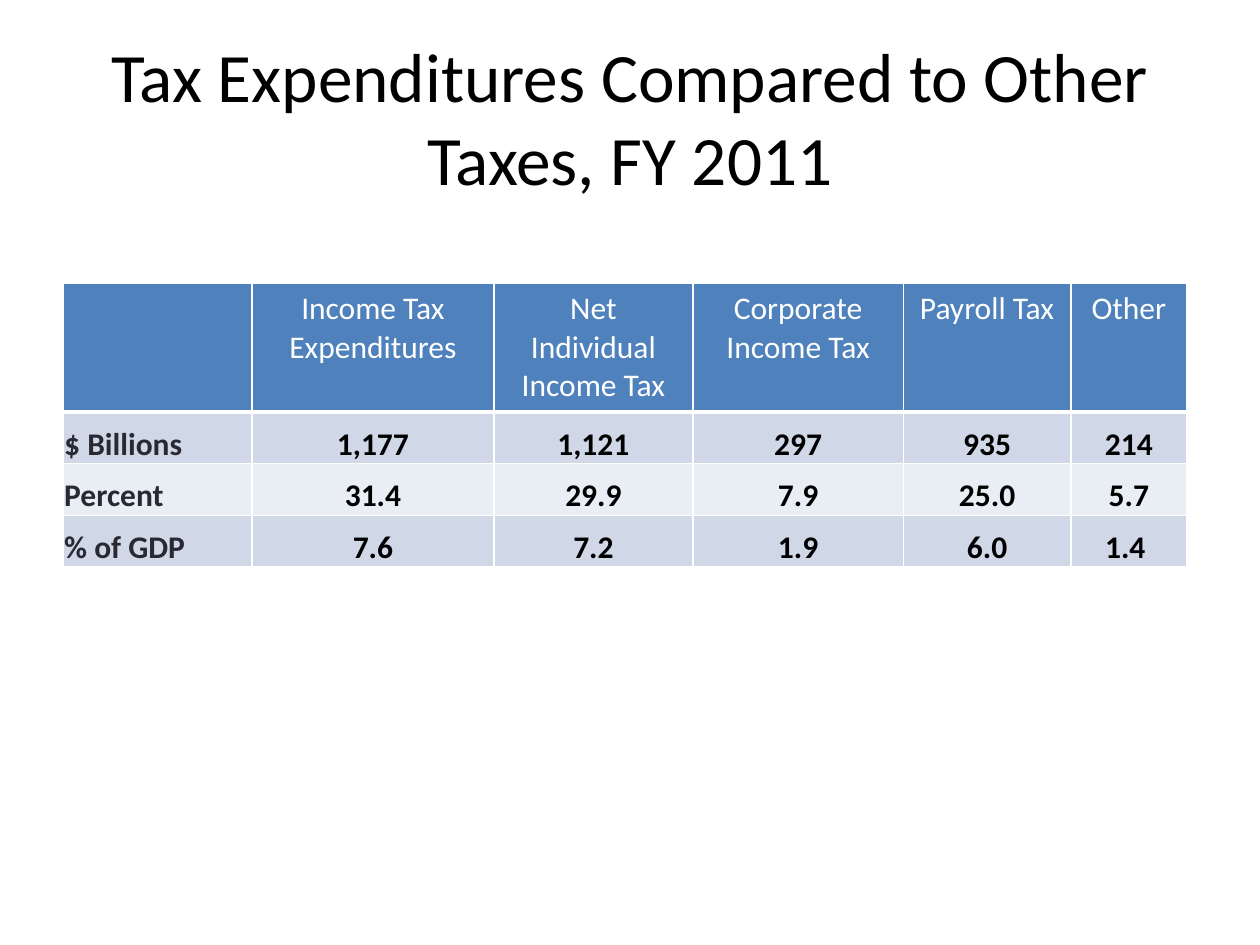
from lxml import etree
from pptx import Presentation
from pptx import util as u
from pptx.dml.color import RGBColor
from pptx.enum import text
from pptx.oxml.ns import qn

HUE = {"head": "4F81BD", "odd": "D0D8E8", "even": "E9EDF4",
       "line": "FFFFFF", "label": "292934", "ink": "000000"}
ROWS = [
    ["", "Income Tax Expenditures", "Net Individual Income Tax",
     "Corporate Income Tax", "Payroll Tax", "Other"],
    ["$ Billions", "1,177", "1,121", "297", "935", "214"],
    ["Percent", "31.4", "29.9", "7.9", "25.0", "5.7"],
    ["% of GDP", "7.6", "7.2", "1.9", "6.0", "1.4 "],
]
WIDE = [1.5, 1.92, 1.58, 1.67, 1.33, 0.92]
TALL = [1.02, 0.41, 0.41, 0.41]


def style(para, size, hue, bold=False):
    para.font.size = u.Pt(size)
    for run in para.runs:
        run.font.name = "Calibri"
        run.font.size = u.Pt(size)
        run.font.bold = bold
        run.font.color.rgb = RGBColor.from_string(HUE[hue])


def edge(cell, base):
    """Draw white cell borders, 1 pt wide with a bottom of base points."""
    props = cell._tc.get_or_add_tcPr()
    for spot, (side, width) in enumerate(
            [("L", 1), ("R", 1), ("T", 1), ("B", base)]):
        line = etree.Element(qn("a:ln" + side), w=str(u.Pt(width)))
        fill = etree.SubElement(line, qn("a:solidFill"))
        etree.SubElement(fill, qn("a:srgbClr"), val=HUE["line"])
        props.insert(spot, line)


deck = Presentation()
deck.slide_width, deck.slide_height = u.Inches(10), u.Inches(7.5)
slide = deck.slides.add_slide(deck.slide_layouts[5])

title = slide.shapes.title
title.left, title.top = int(deck.slide_width * 0.05), int(deck.slide_height * 0.04)
title.width, title.height = int(deck.slide_width * 0.9), u.Inches(1.25)
frame = title.text_frame
frame.text = "Tax Expenditures Compared to Other Taxes, FY 2011"
frame.auto_size = text.MSO_AUTO_SIZE.NONE
frame.vertical_anchor = text.MSO_ANCHOR.MIDDLE
frame.paragraphs[0].alignment = text.PP_ALIGN.CENTER
style(frame.paragraphs[0], 39.6, "ink")

table = slide.shapes.add_table(
    len(ROWS), len(WIDE), title.left, int(deck.slide_height * 0.3),
    u.Inches(sum(WIDE)), u.Inches(sum(TALL))).table
for col, width in zip(table.columns, WIDE):
    col.width = u.Inches(width)
for row, height in zip(table.rows, TALL):
    row.height = u.Inches(height)

for r, row in enumerate(ROWS):
    band = "head" if r == 0 else "odd" if r % 2 else "even"
    for c, word in enumerate(row):
        cell = table.cell(r, c)
        cell.text_frame.text = word
        cell.fill.solid()
        cell.fill.fore_color.rgb = RGBColor.from_string(HUE[band])
        para = cell.text_frame.paragraphs[0]
        para.alignment = text.PP_ALIGN.LEFT if c == 0 else text.PP_ALIGN.CENTER
        if r == 0:
            style(para, 18, "line")
        else:
            style(para, 18, "ink" if c else "label", True)
            cell.vertical_anchor = text.MSO_ANCHOR.BOTTOM
            cell.margin_left = cell.margin_right = cell.margin_top = u.Inches(0.01)
            cell.margin_bottom = 0
        edge(cell, 1 if r else 3)

deck.save("out.pptx")
